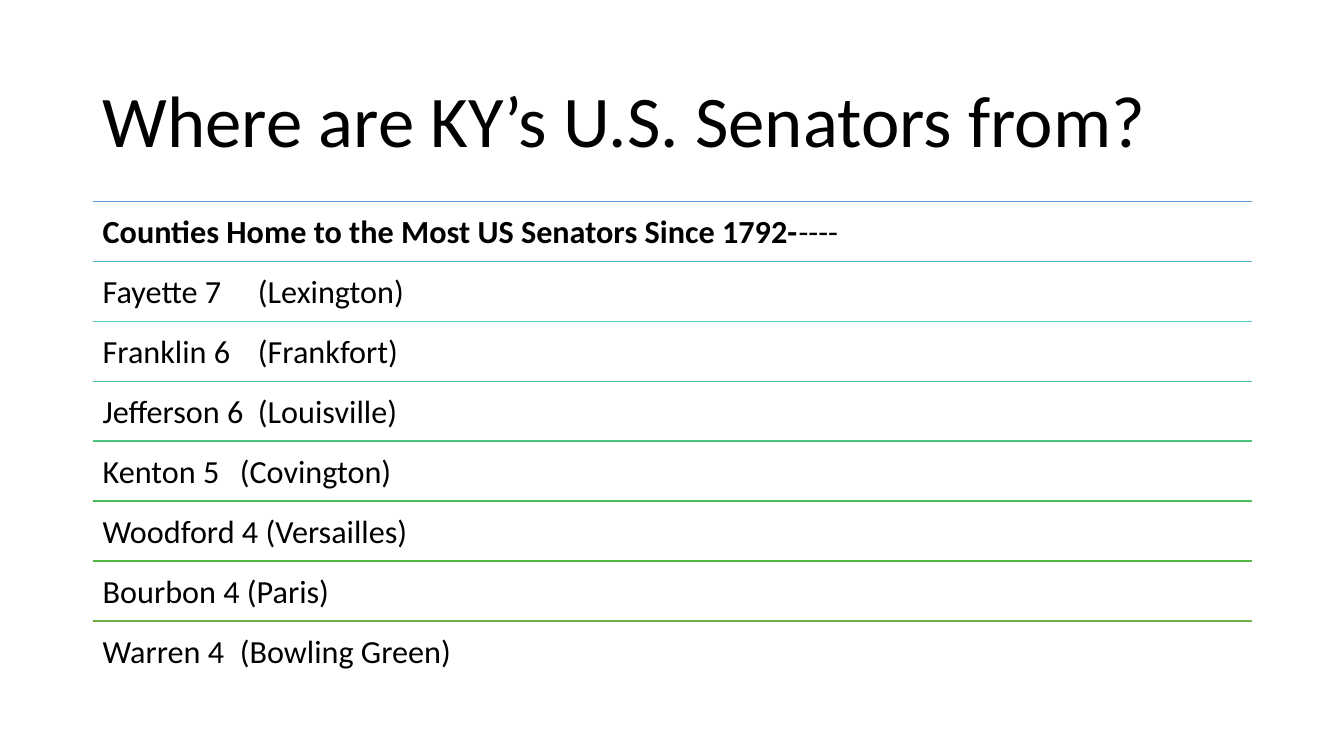
import pptx
import pptx.dml.color
import pptx.enum.shapes
import pptx.enum.text
import pptx.oxml
import pptx.oxml.ns
import pptx.util
from pptx.util import Inches

COLORS = {
    "text": "000000",
    "rules": ["5B9BD5", "57B7D1", "53CCC5", "4FC7A0",
              "4CC27B", "48BD58", "55B646", "70AD47"],
}
FONT = "Calibri"
LEFT, WIDTH = 0.92, 11.5
FIRST_TOP, LAST_TOP = 2, 6.16
WIDE_TAB, NARROW_TAB = 1.54, 1.36

HEADING = [("Counties Home to the Most US Senators Since 1792-", True), ("----", False)]
COUNTIES = [
    ("Fayette 7\t(Lexington)", WIDE_TAB),
    ("Franklin 6\t(Frankfort)", WIDE_TAB),
    ("Jefferson 6\t(Louisville)", WIDE_TAB),
    ("Kenton 5\t(Covington)", NARROW_TAB),
    ("Woodford 4 (Versailles)", None),
    ("Bourbon 4 (Paris)", None),
    ("Warren 4\t(Bowling Green)", NARROW_TAB),
]


def rgb(value):
    """Turn a hex string into a colour."""
    return pptx.dml.color.RGBColor.from_string(value)


def add_tab_stop(paragraph, position):
    """Give a paragraph one left tab stop, in inches."""
    properties = paragraph._p.get_or_add_pPr()
    stops = pptx.oxml.parse_xml(f"<a:tabLst {pptx.oxml.ns.nsdecls('a')}/>")
    stop = pptx.oxml.parse_xml(
        f"<a:tab {pptx.oxml.ns.nsdecls('a')} pos='{Inches(position)}' algn='l'/>")
    stops.append(stop)
    properties.append(stops)


def add_text(slide, pieces, top, height, *, size, inset=0.1, tab=None,
             line_spacing=None, anchor=pptx.enum.text.MSO_ANCHOR.TOP):
    """Write one paragraph of (text, bold) pieces across the content width."""
    box = slide.shapes.add_textbox(
        Inches(LEFT), Inches(top), Inches(WIDTH), Inches(height))
    frame = box.text_frame
    frame.word_wrap = True
    frame.vertical_anchor = anchor
    frame.margin_left = frame.margin_right = Inches(0.1)
    frame.margin_top = frame.margin_bottom = Inches(inset)
    paragraph = frame.paragraphs[0]
    if line_spacing:
        paragraph.line_spacing = line_spacing
    if tab:
        add_tab_stop(paragraph, tab)
    for text, bold in pieces:
        run = paragraph.add_run()
        run.text = text
        run.font.name = FONT
        run.font.size = pptx.util.Pt(size)
        run.font.bold = bold
        run.font.color.rgb = rgb(COLORS["text"])


def add_rule(slide, top, color):
    """Draw a thin horizontal rule across the content width."""
    rule = slide.shapes.add_connector(
        pptx.enum.shapes.MSO_CONNECTOR.STRAIGHT,
        Inches(LEFT), Inches(top), Inches(LEFT + WIDTH), Inches(top))
    rule.line.color.rgb = rgb(color)
    rule.line.width = pptx.util.Pt(1)
    rule._element.spPr.append(
        pptx.oxml.parse_xml(f"<a:effectLst {pptx.oxml.ns.nsdecls('a')}/>"))


def main():
    """Build the slide on the home counties of senators."""
    deck = pptx.Presentation()
    deck.slide_width, deck.slide_height = Inches(13.33), Inches(7.5)
    slide = deck.slides.add_slide(deck.slide_layouts[6])
    add_text(slide, [("Where are KY’s U.S. Senators from?", False)], 0.61, 1.24,
             size=52, inset=0.05, line_spacing=0.9,
             anchor=pptx.enum.text.MSO_ANCHOR.MIDDLE)

    rows = [(HEADING, None)] + [([(county, False)], tab) for county, tab in COUNTIES]
    row_height = (LAST_TOP - FIRST_TOP) / (len(rows) - 1)
    for index, ((pieces, tab), color) in enumerate(zip(rows, COLORS["rules"])):
        top = FIRST_TOP + index * row_height
        add_rule(slide, top, color)
        add_text(slide, pieces, top, row_height, size=23, tab=tab)
    deck.save("out.pptx")


if __name__ == "__main__":
    main()
